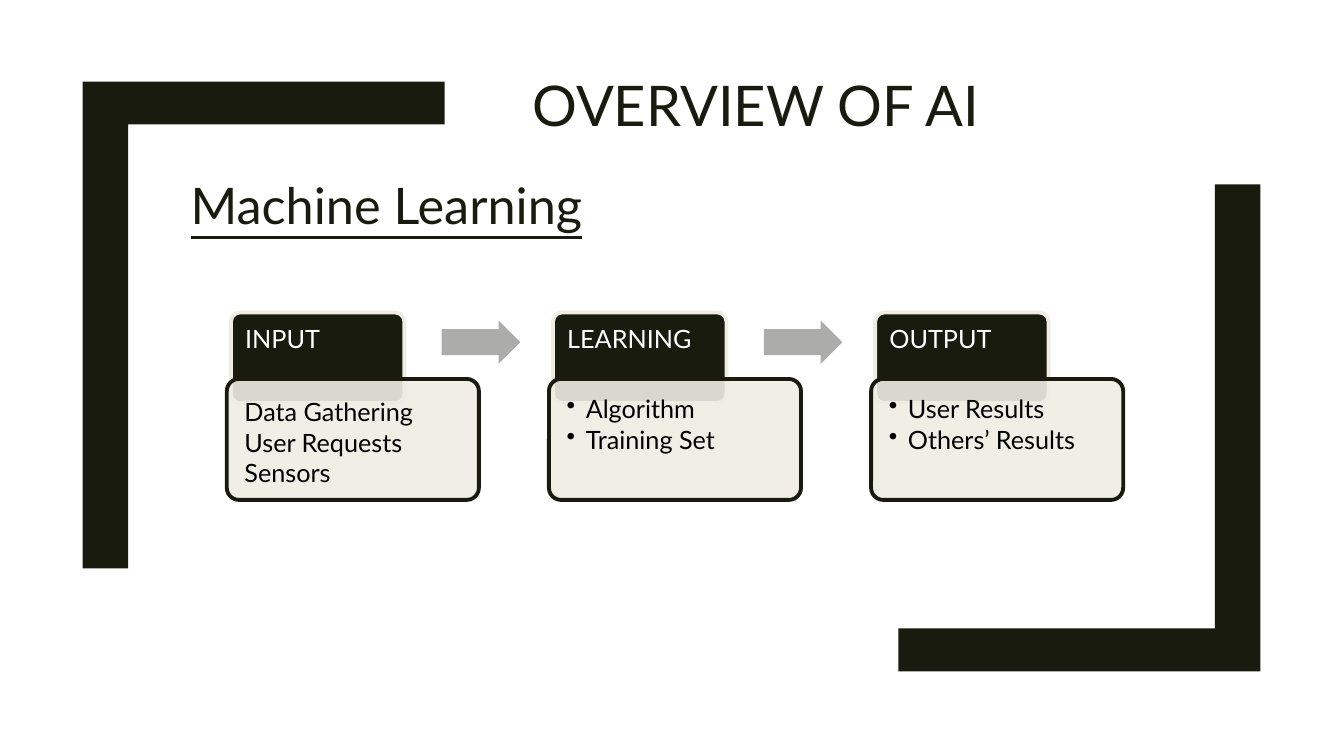
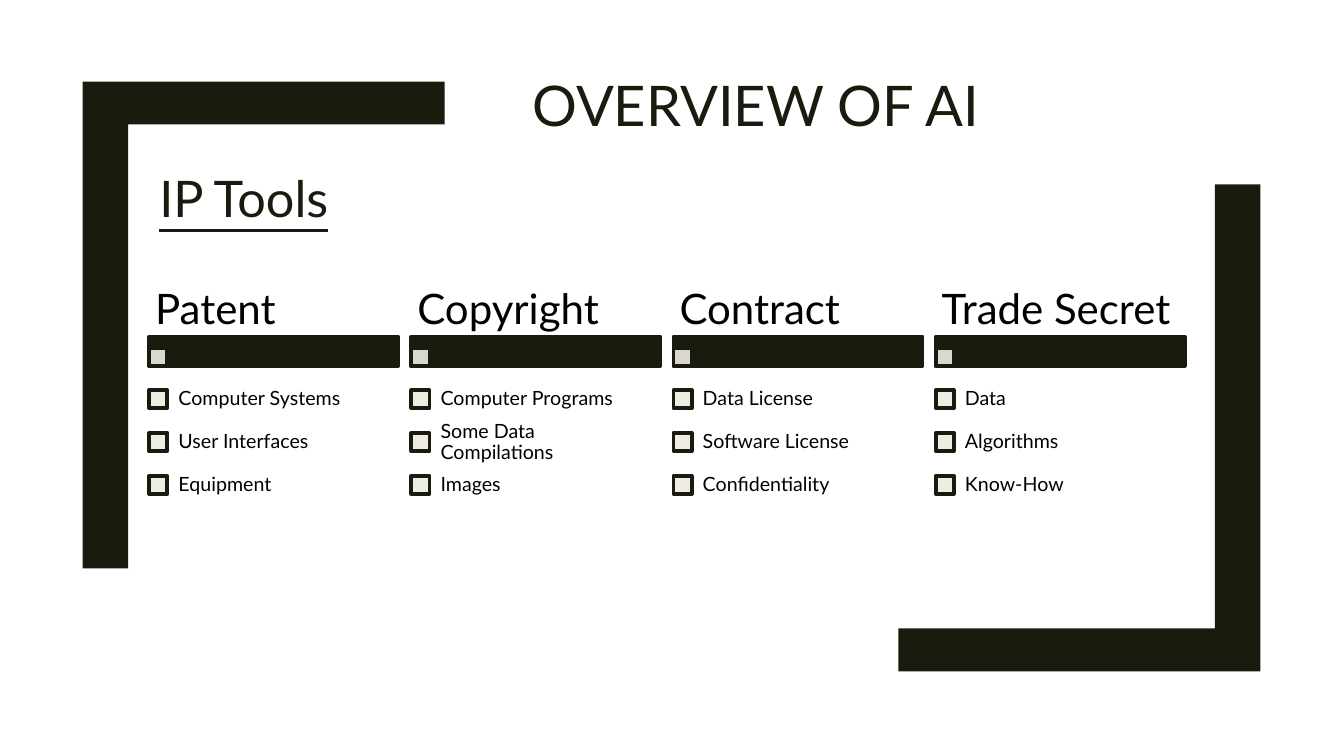
from dataclasses import dataclass
from typing import Any, Optional, Sequence

from pptx import Presentation, util as u
from pptx.dml import color
from pptx.enum import shapes as kinds, text as texts
from pptx.oxml import ns, xmlchemy

# The grid has square cells, 75 rows high and a little over 133 columns wide.
SLIDE_WIDTH, SLIDE_HEIGHT = u.Inches(13.33), u.Inches(7.5)
CELL = SLIDE_HEIGHT / 75

DARK, CREAM, GREY = "191B0E", "EFEDE3", "ACACAB"
WHITE, BLACK = "FFFFFF", "000000"
FONT = "Lato"
BORDER = 2.75
TOP, MIDDLE, BOTTOM = (
    texts.MSO_ANCHOR.TOP, texts.MSO_ANCHOR.MIDDLE, texts.MSO_ANCHOR.BOTTOM)
PRESET = kinds.MSO_SHAPE

BRACKET = [(8.2, 8.1), (44.1, 8.1), (44.1, 12.35), (12.7, 12.35),
           (12.7, 56.4), (8.2, 56.4)]
BRACKET_TURN = (133.2, 74.7)


@dataclass(frozen=True)
class Area:
    """A rectangle in grid cells."""
    column: float
    row: float
    columns: float
    rows: float


@dataclass(frozen=True)
class TextStyle:
    size: float
    color: str = BLACK
    anchor: Any = TOP
    insets: tuple[float, float] = (1, 0.5)
    spacing: float = 0.9
    after: float = 0
    underline: bool = False
    bulleted: bool = False


@dataclass(frozen=True)
class Card:
    heading: str
    lines: tuple[str, ...]
    bulleted: bool = True


@dataclass(frozen=True)
class Tool:
    name: str
    items: tuple[str, ...]


TITLE = TextStyle(40, DARK, BOTTOM, spacing=0.89)
SUBHEADING = TextStyle(36, DARK, spacing=0.89, underline=True)
CARD_HEAD = TextStyle(18, WHITE, insets=(1.15, 1.15))
CARD_LINES = TextStyle(18, insets=(1.4, 1.4), spacing=1)
CARD_BULLETS = TextStyle(18, insets=(1.4, 1.4), after=2.7, bulleted=True)
TOOL_NAME = TextStyle(30, anchor=MIDDLE, insets=(0.6, 0.4))
TOOL_ITEM = TextStyle(14, anchor=MIDDLE, insets=(1.1, 1.1))

CARDS = [
    Card("INPUT", ("Data Gathering", "User Requests", "Sensors"), False),
    Card("LEARNING", ("Algorithm", "Training Set")),
    Card("OUTPUT", ("User Results", "Others’ Results")),
]
CARD_PITCH = 31.95

TOOLS = [
    Tool("Patent", ("Computer Systems", "User Interfaces", "Equipment")),
    Tool("Copyright", ("Computer Programs", "Some Data Compilations", "Images")),
    Tool("Contract", ("Data License", "Software License", "Confidentiality")),
    Tool("Trade Secret", ("Data", "Algorithms", "Know-How")),
]
TOOL_PITCH, ITEM_PITCH, MARK = 26, 4.25, 1.8


def cells(count: float) -> u.Emu:
    return u.Emu(round(count * CELL))


def rgb(value: str) -> color.RGBColor:
    return color.RGBColor.from_string(value)


def assign(target: Any, formats: dict[str, Any]) -> None:
    for name, value in formats.items():
        setattr(target, name, value)


def bounds(area: Area) -> tuple[u.Emu, ...]:
    return tuple(map(cells, (area.column, area.row, area.columns, area.rows)))


def paint(shape: Any, fill: str, line: Optional[str] = None,
          opacity: int = 100) -> None:
    shape.shadow.inherit = False
    shape.fill.solid()
    shape.fill.fore_color.rgb = rgb(fill)
    if opacity < 100:
        fill_color = next(shape.element.iter(ns.qn("a:srgbClr")))
        alpha = xmlchemy.OxmlElement("a:alpha")
        alpha.set("val", str(opacity * 1000))
        fill_color.append(alpha)
    if line:
        shape.line.color.rgb = rgb(line)
        shape.line.width = u.Pt(BORDER)
    else:
        shape.line.fill.background()


def add_bullet(para: Any) -> None:
    properties = para._p.get_or_add_pPr()
    indent = cells(1.9)
    properties.set("marL", str(indent))
    properties.set("indent", str(-indent))
    bullet = xmlchemy.OxmlElement("a:buChar")
    bullet.set("char", "•")
    properties.append(bullet)


def write(shape: Any, lines: Sequence[str], style: TextStyle) -> None:
    frame = shape.text_frame
    across, down = map(cells, style.insets)
    assign(frame, {
        "word_wrap": True, "auto_size": texts.MSO_AUTO_SIZE.NONE,
        "vertical_anchor": style.anchor,
        "margin_left": across, "margin_right": across,
        "margin_top": down, "margin_bottom": down,
    })
    for index, line in enumerate(lines):
        para = frame.add_paragraph() if index else frame.paragraphs[0]
        assign(para, {
            "alignment": texts.PP_ALIGN.LEFT, "line_spacing": style.spacing,
            "space_before": u.Pt(0), "space_after": u.Pt(style.after),
        })
        if style.bulleted:
            add_bullet(para)
        span = para.add_run()
        span.text = line
        assign(span.font, {"name": FONT, "size": u.Pt(style.size),
                           "underline": style.underline})
        span.font.color.rgb = rgb(style.color)


def add_preset(slide: Any, preset: Any, area: Area, fill: str,
               line: Optional[str] = None, opacity: int = 100,
               adjustments: Sequence[float] = ()) -> Any:
    shape = slide.shapes.add_shape(preset, *bounds(area))
    for index, value in enumerate(adjustments):
        shape.adjustments[index] = value
    paint(shape, fill, line, opacity)
    return shape


def add_label(slide: Any, area: Area, line: str, style: TextStyle) -> None:
    write(slide.shapes.add_textbox(*bounds(area)), [line], style)


def fill_placeholder(holder: Any, area: Area, line: str,
                     style: TextStyle) -> None:
    names = ("left", "top", "width", "height")
    assign(holder, dict(zip(names, bounds(area))))
    write(holder, [line], style)


def add_slide(deck: Any, subheading: str, column: float, row: float) -> Any:
    slide = deck.slides.add_slide(deck.slide_layouts[0])
    fill_placeholder(slide.shapes.title, Area(51.8, 6.7, 81.5, 7.5),
                     "OVERVIEW OF AI", TITLE)
    fill_placeholder(slide.placeholders[1], Area(column, row, 41.6, 9.1),
                     subheading, SUBHEADING)
    return slide


def move_brackets_to_layout(slide: Any) -> None:
    """Draw the corner bracket and its half turn, shared through the layout."""
    turned = [(BRACKET_TURN[0] - x, BRACKET_TURN[1] - y) for x, y in BRACKET]
    for outline in (BRACKET, turned):
        points = [(cells(x), cells(y)) for x, y in outline]
        builder = slide.shapes.build_freeform(*points[0])
        builder.add_line_segments(points[1:], close=True)
        bracket = builder.convert_to_shape()
        paint(bracket, DARK)
        slide.slide_layout.shapes.element.append(bracket.element)


def draw_card(slide: Any, card: Card, column: float) -> None:
    head = add_preset(slide, PRESET.ROUNDED_RECTANGLE,
                      Area(column + 0.4, 31, 17.2, 9), DARK, CREAM,
                      adjustments=[0.1])
    write(head, [card.heading], CARD_HEAD)
    body = add_preset(slide, PRESET.ROUNDED_RECTANGLE,
                      Area(column, 37.6, 25, 12), CREAM, DARK, 90, [0.1])
    write(body, card.lines, CARD_BULLETS if card.bulleted else CARD_LINES)


def draw_tool(slide: Any, tool: Tool, column: float) -> None:
    add_preset(slide, PRESET.RECTANGLE, Area(column, 33.4, 24.7, 2.9),
               DARK, DARK)
    add_preset(slide, PRESET.RECTANGLE, Area(column, 34.5, MARK, MARK),
               CREAM, DARK, 90)
    add_label(slide, Area(column, 28.2, 24.7, 5.2), tool.name, TOOL_NAME)
    for index, item in enumerate(tool.items):
        row = 37.5 + index * ITEM_PITCH
        add_preset(slide, PRESET.RECTANGLE,
                   Area(column, row + 1.2, MARK, MARK), CREAM, DARK)
        add_label(slide, Area(column + MARK, row, 22.9, ITEM_PITCH),
                  item, TOOL_ITEM)


def main() -> None:
    deck = Presentation()
    deck.slide_width, deck.slide_height = SLIDE_WIDTH, SLIDE_HEIGHT

    learning = add_slide(deck, "Machine Learning", 17.9, 17.5)
    move_brackets_to_layout(learning)
    for index, card in enumerate(CARDS):
        column = 22.5 + index * CARD_PITCH
        draw_card(learning, card, column)
        if index < len(CARDS) - 1:
            add_preset(learning, PRESET.RIGHT_ARROW,
                       Area(column + 21.3, 31.8, 7.8, 4.3), GREY,
                       adjustments=[0.6, 0.5])

    tools = add_slide(deck, "IP Tools", 14.8, 16.8)
    for index, tool in enumerate(TOOLS):
        draw_tool(tools, tool, 14.8 + index * TOOL_PITCH)

    deck.save("out.pptx")


if __name__ == "__main__":
    main()
